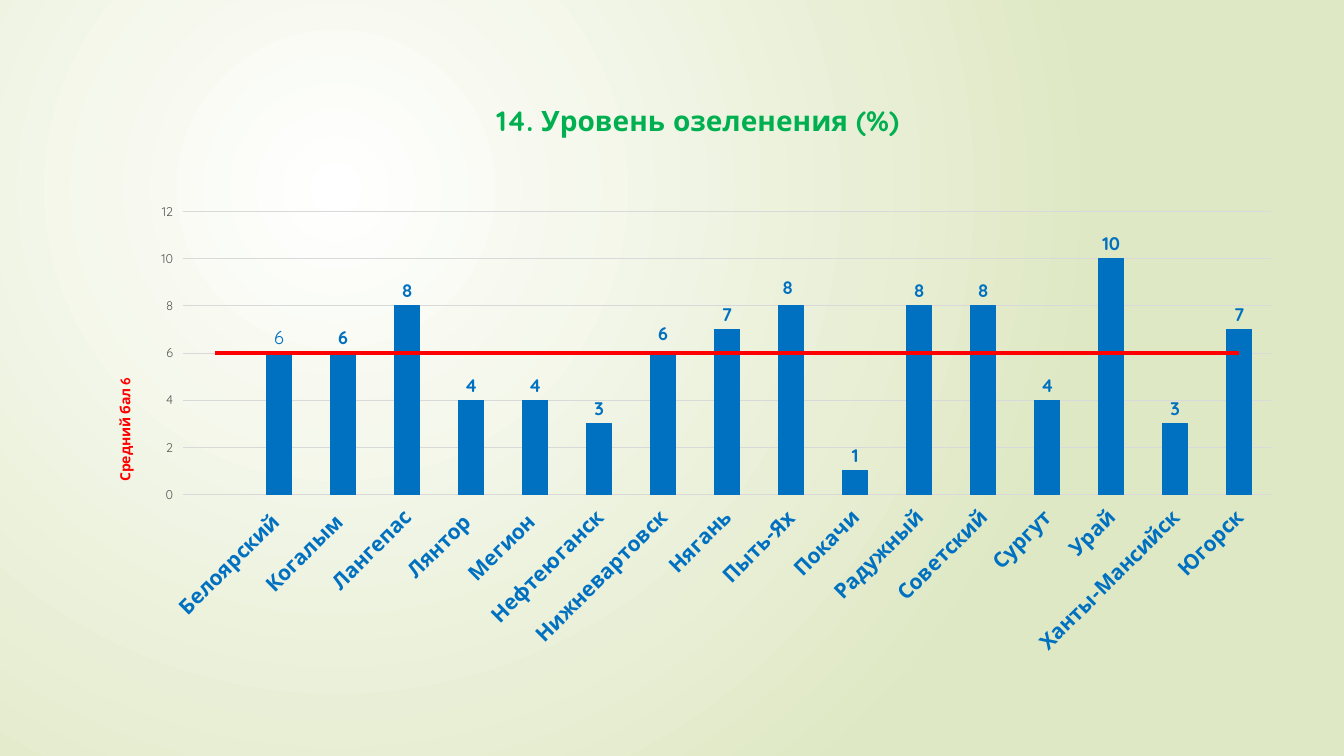
import pptx
import pptx.chart.data
import pptx.dml.color
import pptx.enum.chart
import pptx.enum.text
import pptx.oxml
import pptx.oxml.ns
import pptx.util

Inches, Pt = pptx.util.Inches, pptx.util.Pt
RGBColor = pptx.dml.color.RGBColor
qn = pptx.oxml.ns.qn

WHITE = RGBColor(0xFF, 0xFF, 0xFF)
PALE_GREEN = RGBColor(0xDF, 0xE8, 0xC4)
GREEN = RGBColor(0x00, 0xB0, 0x50)
BLUE = RGBColor(0x00, 0x70, 0xC0)
RED = RGBColor(0xFF, 0x00, 0x00)
BLACK = RGBColor(0x00, 0x00, 0x00)
GRAY = RGBColor(0x59, 0x59, 0x59)
GRID_GRAY = RGBColor(0xD9, 0xD9, 0xD9)
FONT = "Quicksand"
AVERAGE = 6

GREENING = {
    "": None, "Белоярский ": 6, "Когалым ": 6, "Лангепас": 8, "Лянтор ": 4,
    "Мегион ": 4, "Нефтеюганск": 3, "Нижневартовск": 6, "Нягань": 7,
    "Пыть-Ях": 8, "Покачи": 1, "Радужный": 8, "Советский": 8, "Сургут": 4,
    "Урай": 10, "Ханты-Мансийск": 3, "Югорск": 7,
}


def format_font(font, size, color, bold=False):
    values = {"name": FONT, "size": Pt(size), "bold": bold}
    for name, value in values.items():
        setattr(font, name, value)
    font.color.rgb = color


def chart_xml(content):
    """Parse an XML fragment that uses the chart namespace prefix."""
    head, rest = content.split(">", 1)
    closing = ""
    if head.endswith("/"):
        head, closing = head[:-1], "/"
    namespace = pptx.oxml.ns.nsdecls("c")
    return pptx.oxml.parse_xml(f"{head} {namespace}{closing}>{rest}")


deck = pptx.Presentation()
deck.slide_width, deck.slide_height = Inches(13.33), Inches(7.5)
slide = deck.slides.add_slide(deck.slide_layouts[5])

# Background: round gradient
background = slide.background.fill
background.gradient()
for stop, color in zip(background.gradient_stops, (WHITE, PALE_GREEN)):
    stop.color.rgb = color
linear = slide.element.find(".//" + qn("a:lin"))
linear.getparent().replace(linear, pptx.oxml.parse_xml(
    f'<a:path {pptx.oxml.ns.nsdecls("a")} path="circle">'
    '<a:fillToRect l="50000" t="50000" r="100000" b="100000"/></a:path>'))

# Title
title = slide.shapes.title
title.left, title.top = Inches(1.19), Inches(0.77)
title.width, title.height = Inches(11.46), Inches(0.64)
title.text_frame.vertical_anchor = pptx.enum.text.MSO_ANCHOR.BOTTOM
para = title.text_frame.paragraphs[0]
para.alignment = pptx.enum.text.PP_ALIGN.CENTER
span = para.add_run()
span.text = "14. Уровень озеленения (%)"
format_font(span.font, 20, GREEN, True)

# Chart
data = pptx.chart.data.CategoryChartData()
data.categories = list(GREENING)
data.add_series("Series 1", list(GREENING.values()))
data.add_series("Series 2", [AVERAGE] * len(GREENING))
chart = slide.shapes.add_chart(
    pptx.enum.chart.XL_CHART_TYPE.COLUMN_CLUSTERED,
    Inches(1.08), Inches(1.88), Inches(11.68), Inches(4.86), data).chart
chart.has_legend = False
chart.has_title = False
format_font(chart.font, 10, BLACK)

# Inner plot area
plot_area = chart.element.find(".//" + qn("c:plotArea"))
for layout in plot_area.findall(qn("c:layout")):
    plot_area.remove(layout)
plot_box = {"x": 0.063, "y": 0.045, "w": 0.924, "h": 0.578}
plot_area.insert(0, chart_xml(
    '<c:layout><c:manualLayout><c:layoutTarget val="inner"/>'
    '<c:xMode val="edge"/><c:yMode val="edge"/>'
    + "".join(f'<c:{name} val="{value}"/>' for name, value in plot_box.items())
    + "</c:manualLayout></c:layout>"))

# The average series becomes a line on the same axes
bar_chart = plot_area.find(qn("c:barChart"))
average = bar_chart.findall(qn("c:ser"))[1]
for bar_setting in average.findall(qn("c:invertIfNegative")):
    average.remove(bar_setting)
line_chart = chart_xml(
    '<c:lineChart><c:grouping val="standard"/><c:varyColors val="0"/></c:lineChart>')
line_chart.append(average)
line_chart.append(chart_xml('<c:marker val="1"/>'))
for axis_id in bar_chart.findall(qn("c:axId")):
    line_chart.append(chart_xml(f'<c:axId val="{axis_id.get("val")}"/>'))
bar_chart.addnext(line_chart)

columns_plot, line_plot = chart.plots
columns_plot.gap_width = 150
columns_plot.vary_by_categories = False
columns = columns_plot.series[0]
columns.format.fill.solid()
columns.format.fill.fore_color.rgb = BLUE
average_line = line_plot.series[0]
average_line.smooth = False
average_line.marker.style = pptx.enum.chart.XL_MARKER_STYLE.NONE
for series, color, width in ((columns, BLUE, 0.75), (average_line, RED, 2.25)):
    series.format.line.color.rgb = color
    series.format.line.width = Pt(width)

# Value labels
labels = columns.data_labels
labels.show_value = True
labels.position = pptx.enum.chart.XL_LABEL_POSITION.OUTSIDE_END
format_font(labels.font, 13, BLUE, True)
format_font(columns.points[1].data_label.font, 13, BLUE)
for index, (shift_x, shift_y) in {7: (0, -0.01), 9: (-0.003, -0.006)}.items():
    format_font(columns.points[index].data_label.font, 13, BLUE, True)
    label_index = bar_chart.find(f'.//{qn("c:dLbl")}/{qn("c:idx")}[@val="{index}"]')
    label_index.addnext(chart_xml(
        f'<c:layout><c:manualLayout><c:x val="{shift_x}"/><c:y val="{shift_y}"/>'
        '</c:manualLayout></c:layout>'))

# Axes
cities, values = chart.category_axis, chart.value_axis
for axis, size, color, bold in ((cities, 15, BLUE, True), (values, 9, GRAY, False)):
    axis.major_tick_mark = pptx.enum.chart.XL_TICK_MARK.OUTSIDE
    axis.format.line.fill.background()
    format_font(axis.tick_labels.font, size, color, bold)
for name, value in {"minimum_scale": 0, "maximum_scale": 12, "major_unit": 2}.items():
    setattr(values, name, value)
values.major_gridlines.format.line.color.rgb = GRID_GRAY
values.major_gridlines.format.line.width = Pt(0.75)
span = values.axis_title.text_frame.paragraphs[0].add_run()
span.text = "Средний бал 6"
format_font(span.font, 10, RED, True)

# Slanted city names, upright axis title
cities_body = plot_area.find(f'{qn("c:catAx")}/{qn("c:txPr")}/{qn("a:bodyPr")}')
title_body = plot_area.find(f'{qn("c:valAx")}/{qn("c:title")}//{qn("a:bodyPr")}')
for body, rotation in ((cities_body, -45), (title_body, -90)):
    body.set("rot", str(rotation * 60000))
    body.set("vert", "horz")

deck.save("out.pptx")
